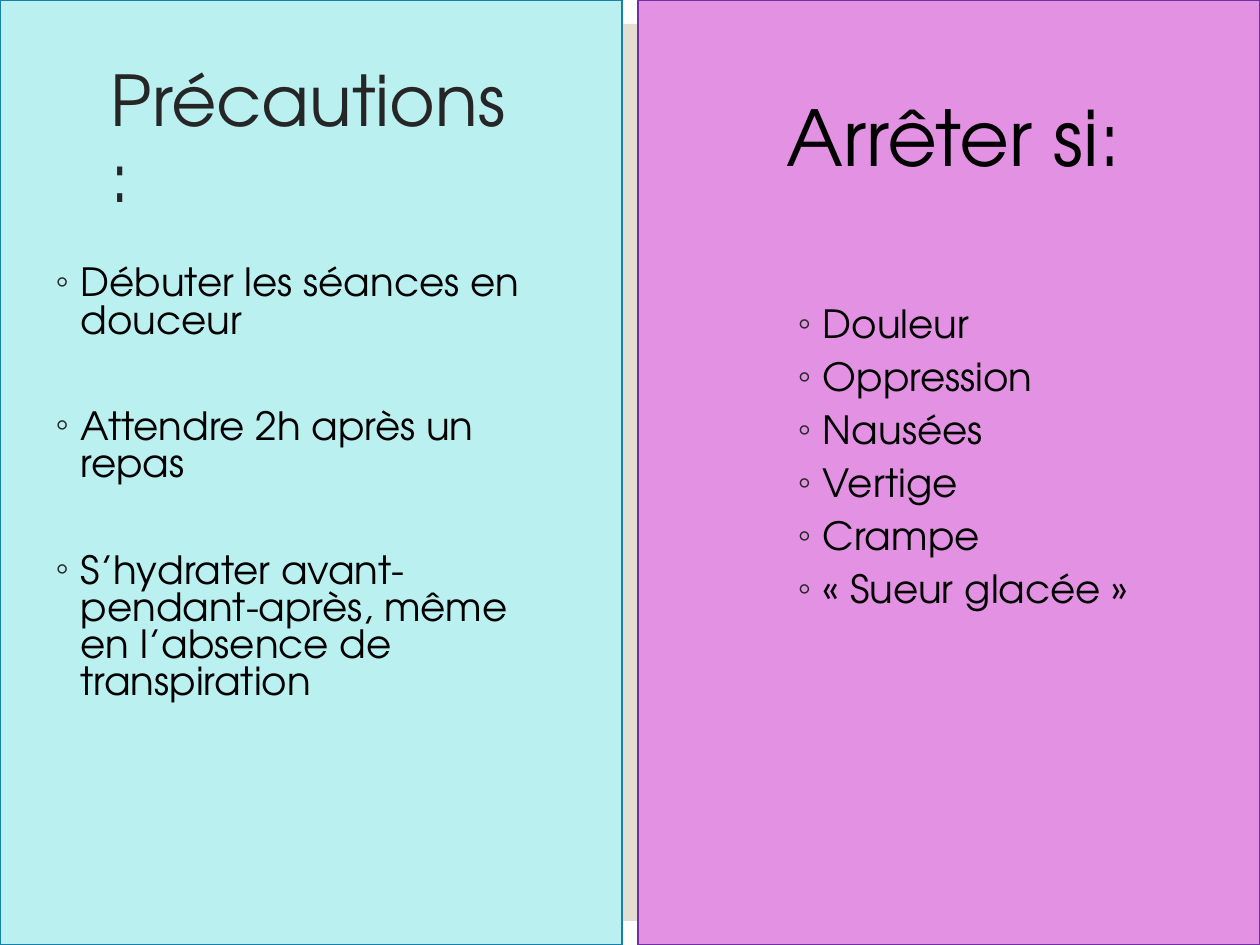
"""Build a two-panel slide of exercise precautions and reasons to stop."""
from lxml.etree import SubElement
from pptx import Presentation
from pptx.dml.color import RGBColor
from pptx.enum.shapes import MSO_SHAPE
from pptx.enum.text import MSO_ANCHOR, MSO_AUTO_SIZE, PP_ALIGN
from pptx.oxml.ns import qn
from pptx.util import Pt


def color(value):
    return RGBColor.from_string(value)


def write_text(shape, lines, *, box, size, fill="000000", anchor=MSO_ANCHOR.TOP,
               line_spacing=0.9, first_gap=0, gap=0, bullet=None):
    shape.left, shape.top, shape.width, shape.height = map(Pt, box)
    frame = shape.text_frame
    frame.word_wrap = True
    frame.auto_size = MSO_AUTO_SIZE.NONE
    frame.vertical_anchor = anchor
    frame.text = "\n".join(lines)
    for number, paragraph in enumerate(frame.paragraphs):
        paragraph.alignment = PP_ALIGN.LEFT
        paragraph.line_spacing = line_spacing
        paragraph.space_before = Pt(gap if number else first_gap)
        font = paragraph.runs[0].font
        font.name = "TeX Gyre Adventor"
        font.size = Pt(size)
        font.color.rgb = color(fill)
        if bullet:
            properties = paragraph._p.get_or_add_pPr()
            properties.set("marL", str(Pt(14.4)))
            properties.set("indent", str(-Pt(14.4)))
            bullet_color = SubElement(properties, qn("a:buClr"))
            SubElement(bullet_color, qn("a:srgbClr"), val="262626")
            SubElement(properties, qn("a:buChar"), char=bullet)


presentation = Presentation()
presentation.slide_width = Pt(720)
presentation.slide_height = Pt(540)
slide = presentation.slides.add_slide(presentation.slide_layouts[3])
title, precautions, symptoms = slide.placeholders

panels = [
    ((13.7, 13.7, 712.6 - 20, 512.6), "E3DED1", None),
    ((364.4, 0, 355.6, 540), "E391E3", "7030A0"),
    ((0, 0, 355.6, 540), "BBF0F1", "1580A9"),
]
for box, fill, outline in panels:
    panel = slide.shapes.add_shape(MSO_SHAPE.RECTANGLE, *map(Pt, box))
    panel.shadow.inherit = False
    panel.fill.solid()
    panel.fill.fore_color.rgb = color(fill)
    if outline:
        panel.line.color.rgb = color(outline)
        panel.line.width = Pt(1)
    else:
        panel.line.fill.background()
    title.element.addprevious(panel.element)

write_text(title, ["Précautions:"], box=(56.2, 28.8, 243.4, 104.4), size=40,
           fill="262626", anchor=MSO_ANCHOR.MIDDLE)
write_text(precautions, [
    "Débuter les séances en douceur",
    "Attendre 2h après un repas",
    "S’hydrater avant-pendant-après, même en l’absence de transpiration",
], box=(24.5, 149, 306, 272.2), size=22.2, line_spacing=0.8,
    first_gap=9, gap=39.4, bullet="◦")
write_text(symptoms, [
    "Douleur", "Oppression", "Nausées", "Vertige", "Crampe", "« Sueur glacée »",
], box=(448.6, 172.8, 209.5, 223.9), size=22.2, line_spacing=0.8,
    first_gap=9, gap=9, bullet="◦")
stop_heading = slide.shapes.add_textbox(0, 0, 0, 0)
write_text(stop_heading, ["Arrêter si:"], box=(442.1, 28.8, 231.8, 104.4), size=44,
           anchor=MSO_ANCHOR.MIDDLE)

presentation.save("out.pptx")
